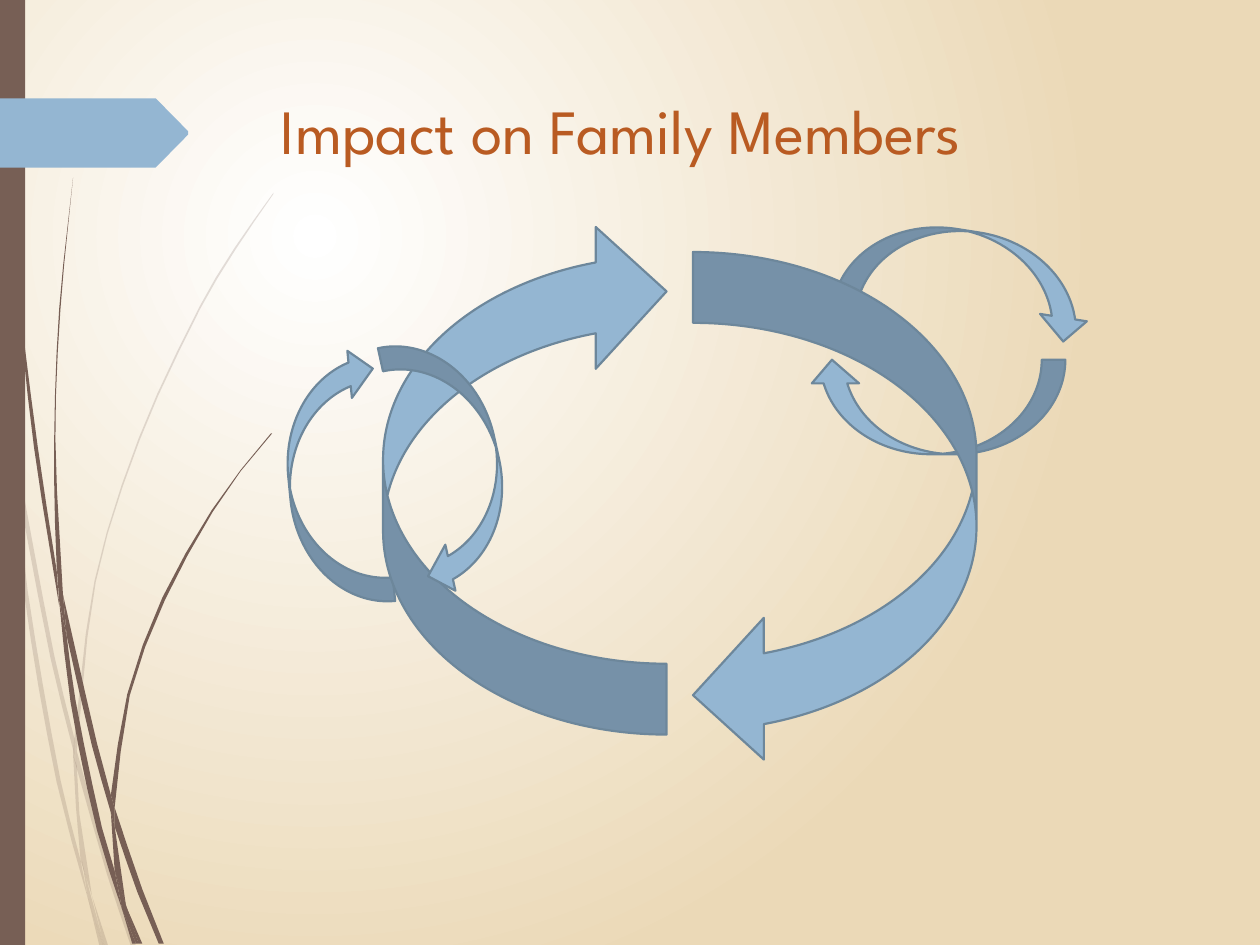
from math import ceil, dist

from lxml import etree
from pptx import Presentation
from pptx.dml.color import RGBColor
from pptx.enum.shapes import MSO_SHAPE
from pptx.enum.text import MSO_ANCHOR
from pptx.oxml.ns import qn
from pptx.util import Pt

RECT, ARROW = MSO_SHAPE.RECTANGLE, MSO_SHAPE.CURVED_LEFT_ARROW
TOP = MSO_ANCHOR.TOP
FONT = "League Spartan"
COLORS = {"white": "FFFFFF", "sand": "EBD9B7", "brown": "775F55",
          "blue": "94B6D2", "outline": "6D879B", "title": "B95B22"}
UNIT = 0.72  # points per grid step in the grass outlines
SPAN = 50    # longest straight piece of a blade's edge, in grid steps

# Each blade part has two edges, given as points that a smooth curve runs through.
BACK_GRASS = [
    ([(8, 350), (0, 282)], [(0, 299), (8, 350)]),
    ([(12, 376), (40, 522), (59, 599)], [(59, 586), (43, 520), (10, 345)]),
    ([(61, 610), (85, 694), (104, 751)], [(108, 751), (88, 692), (61, 596)]),
    ([(73, 711), (83, 751)], [(86, 751)]),
    ([(8, 350), (19, 470), (45, 621), (70, 714)],
     [(64, 683), (48, 619), (22, 469), (12, 376)]),
    ([(58, 599), (64, 683), (73, 711)], [(63, 646), (61, 608)]),
    ([(217, 153), (186, 197), (158, 244), (110, 348), (75, 461), (59, 586)],
     [(61, 596), (76, 462), (111, 349), (159, 245), (187, 198), (217, 154)]),
    ([(70, 714), (79, 751)], [(82, 751)]),
    ([(59, 586), (58, 599), (61, 610)], [(61, 596)]),
    ([(65, 683), (70, 714), (82, 751)], [(83, 751), (67, 692)]),
]
FRONT_GRASS = [
    ([(2, 0), (5, 110), (14, 233), (27, 355), (47, 481)],
     [(45, 453), (30, 355), (15, 232), (6, 109), (3, 0)]),
    ([(53, 505), (73, 592), (88, 645)], [(88, 631), (77, 590), (50, 472)]),
    ([(91, 656), (109, 708), (126, 749)], [(130, 749), (113, 706), (91, 641)]),
    ([(47, 477), (56, 557), (77, 659), (97, 722)],
     [(91, 691), (81, 657), (60, 556), (53, 505)]),
    ([(58, 141), (47, 245), (43, 349), (45, 449), (49, 472)],
     [(50, 472), (44, 349), (48, 245), (58, 141)]),
    ([(100, 719), (110, 749)], [(113, 749)]),
    ([(45, 449), (47, 477), (53, 505)], [(50, 472)]),
    ([(215, 344), (191, 373), (168, 405), (129, 474), (101, 551), (88, 631)],
     [(91, 641), (103, 552), (131, 476), (169, 406), (191, 374), (216, 344)]),
    ([(97, 722), (105, 749)], [(108, 749)]),
    ([(88, 645), (91, 691), (100, 719)], [(91, 656)]),
    ([(88, 631), (88, 645), (91, 656)], [(91, 641)]),
    ([(91, 691), (97, 722), (108, 749)], [(110, 749), (96, 706)]),
]
# left, top, width, height, rotation; back to front
SMALL_BACK = [(525.6, 85.68, 54, 146.88, 279), (164.88, 199.44, 54, 146.88, 174.5),
              (508.32, 159.12, 54, 146.88, 90)]
LARGE_AND_FRONT = [(396, 144, 162, 293.76, 0), (218.88, 126, 162, 293.76, 180),
                   (231.12, 191.52, 54, 146.88, 347.6)]


def rgb(name):
    return RGBColor.from_string(COLORS[name])


def paint(sp, fill, line=None):
    sp.shadow.inherit = False
    sp.fill.solid()
    sp.fill.fore_color.rgb = rgb(fill)
    if line:
        sp.line.color.rgb = rgb(line)
        sp.line.width = Pt(1.25)
    else:
        sp.line.fill.background()


def smooth(points):
    """Return points along a Hermite curve through the given points."""
    if len(points) < 3:
        return points
    tangents = []
    for i in range(len(points)):
        a, b = points[max(i - 1, 0)], points[min(i + 1, len(points) - 1)]
        length = dist(a, points[i]) + dist(points[i], b)
        tangents.append([(b[k] - a[k]) / length for k in (0, 1)])
    curve = [points[0]]
    for i, (p, q) in enumerate(zip(points, points[1:])):
        d = dist(p, q)
        steps = ceil(d / SPAN)
        for step in range(1, steps + 1):
            t = step / steps
            e = t * t * (3 - 2 * t)
            u, v = d * t * (1 - t) ** 2, d * t * t * (t - 1)
            curve.append(tuple(p[k] + (q[k] - p[k]) * e + tangents[i][k] * u
                               + tangents[i + 1][k] * v for k in (0, 1)))
    return curve


def outline(shapes, points, fill):
    """Add a closed outline through points given in points."""
    (x, y), *rest = [(Pt(px), Pt(py)) for px, py in points]
    builder = shapes.build_freeform(x, y)
    builder.add_line_segments(rest)
    sp = builder.convert_to_shape()
    paint(sp, fill)
    return sp


def grass(s, left, top, parts, opacity=100):
    group = s.shapes.add_group_shape()
    for one_edge, other_edge in parts:
        edge = smooth(one_edge) + smooth(other_edge)
        sp = outline(group.shapes, [(left + x * UNIT, top + y * UNIT) for x, y in edge],
                     "brown")
        if opacity < 100:
            color = sp._element.spPr.find(".//" + qn("a:srgbClr"))
            etree.SubElement(color, qn("a:alpha"), val=str(opacity * 1000))


def background(s):
    fill = s.background.fill
    fill.gradient()
    for stop, name in zip(fill.gradient_stops, ("white", "sand")):
        stop.color.rgb = rgb(name)
    grad = s._element.find(".//" + qn("a:gradFill"))
    grad.remove(grad.find(qn("a:lin")))
    circle = etree.SubElement(grad, qn("a:path"), {"path": "circle"})
    etree.SubElement(circle, qn("a:fillToRect"), l="50000", t="50000", r="100000", b="100000")


def side_bar(s, left, top, width, height):
    sp = s.shapes.add_shape(RECT, Pt(left), Pt(top), Pt(width), Pt(height))
    paint(sp, "brown")


def tag(s, left, top, width, height):
    """Add the pointed tag at the slide's edge."""
    right, bottom, middle = left + width, top + height, top + height / 2
    shoulder = right - 18.5
    outline(s.shapes, [(left, top), (shoulder, top), (right, middle - 1),
                       (right, middle + 1), (shoulder, bottom), (left, bottom)], "blue")


def title(s, left, top, width, height, text):
    tf = s.shapes.add_textbox(Pt(left), Pt(top), Pt(width), Pt(height)).text_frame
    tf.word_wrap = True
    tf.vertical_anchor = TOP
    p = tf.paragraphs[0]
    p.text = text
    p.font.name, p.font.size = FONT, Pt(36)
    p.font.color.rgb = rgb("title")


def curved_arrows(s, arrows):
    for left, top, width, height, rotation in arrows:
        sp = s.shapes.add_shape(ARROW, Pt(left), Pt(top), Pt(width), Pt(height))
        sp.rotation = rotation
        paint(sp, "blue", "outline")


def main():
    prs = Presentation()
    prs.slide_width, prs.slide_height = Pt(720), Pt(540)
    s = prs.slides.add_slide(prs.slide_layouts[6])
    background(s)
    grass(s, 0, 0, BACK_GRASS, opacity=20)
    grass(s, 0, 0, FRONT_GRASS)
    side_bar(s, 0, 0, 14.4, 540)
    tag(s, 0, 56.16, 107.5, 39.6)
    curved_arrows(s, SMALL_BACK)
    title(s, 153.36, 48.96, 519.12, 100.8, "Impact on Family Members")
    curved_arrows(s, LARGE_AND_FRONT)
    prs.save("out.pptx")


if __name__ == "__main__":
    main()
